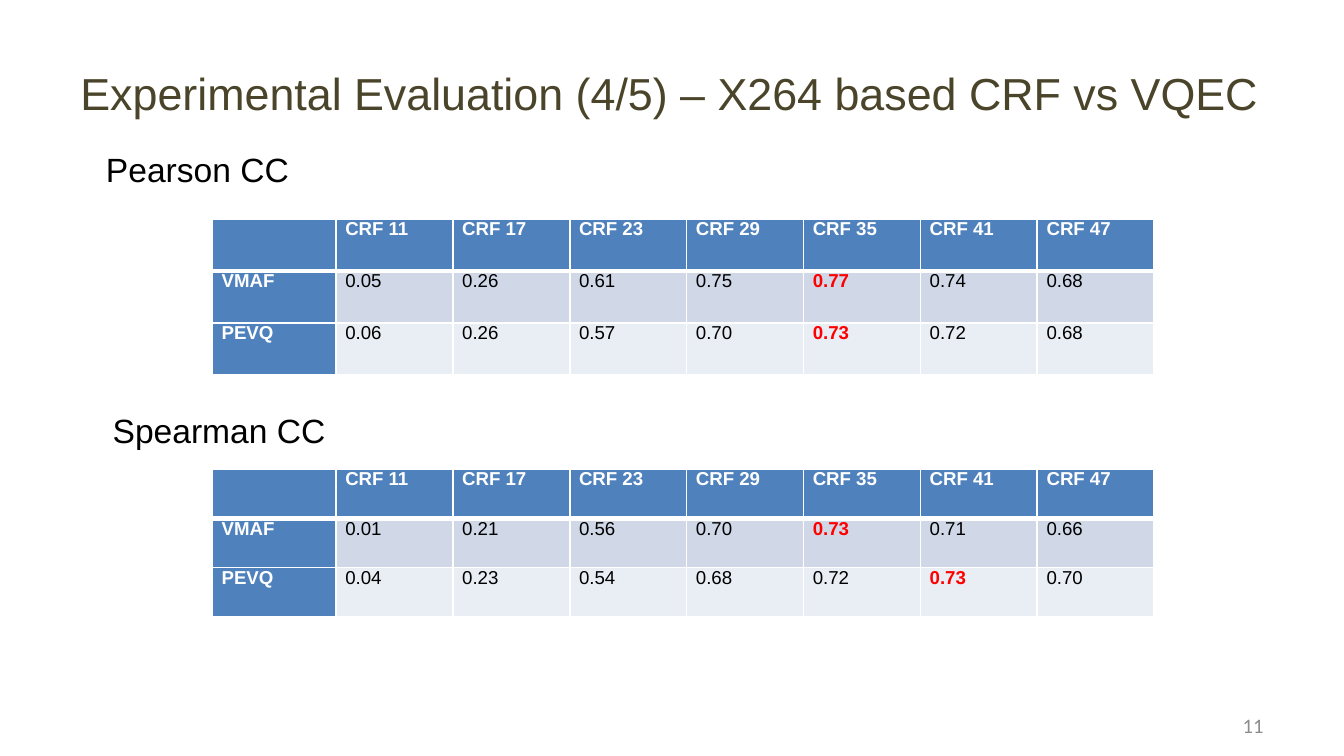
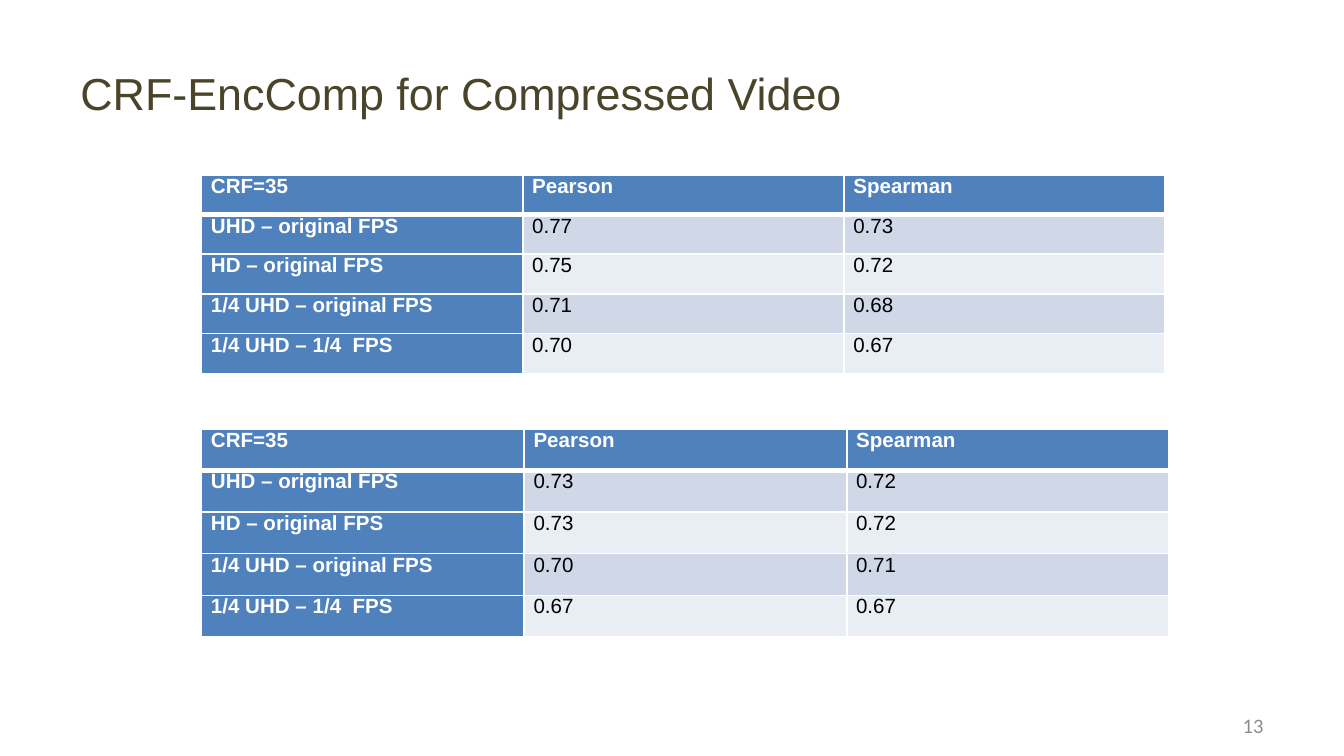
"""Build two slides of correlation tables for CRF-based video quality evaluation."""
from lxml.etree import SubElement
from pptx import Presentation
from pptx.dml.color import RGBColor
from pptx.enum.text import MSO_ANCHOR, PP_ALIGN
from pptx.oxml.ns import qn
from pptx.util import Inches, Pt

HEADER, BANDS = "4F81BD", ("D0D8E8", "E9EDF4")
WHITE, BLACK, RED, OLIVE, GREY = "FFFFFF", "000000", "FF0000", "4A452A", "8C8C8C"

CRF_HEADER = ["", *(f"CRF {crf}" for crf in range(11, 48, 6))]
FPS_HEADER = ["CRF=35", "Pearson", "Spearman"]
CRF_FORMAT = {"header": CRF_HEADER, "left": 1.58, "widths": [0.92] + [0.87] * 7,
              "size": 10, "mark_best": True}
FPS_FORMAT = {"header": FPS_HEADER, "left": 1.5, "size": 11, "mark_best": False}
FORMATS = ["UHD – original FPS", "HD – original FPS",
           "1/4 UHD – original FPS", "1/4 UHD – 1/4  FPS"]

SLIDES = [
    {
        "title": "Experimental Evaluation (4/5) – X264 based CRF vs VQEC",
        "number": "11",
        "labels": [("Pearson CC", (0.69, 1.06, 1.58, 0.4)),
                   ("Spearman CC", (0.74, 3, 1.8, 0.4))],
        "tables": [
            {**CRF_FORMAT, "top": 1.63, "height": 1.16, "rows": [
                ("VMAF", 0.05, 0.26, 0.61, 0.75, 0.77, 0.74, 0.68),
                ("PEVQ", 0.06, 0.26, 0.57, 0.70, 0.73, 0.72, 0.68)]},
            {**CRF_FORMAT, "top": 3.49, "height": 1.1, "rows": [
                ("VMAF", 0.01, 0.21, 0.56, 0.70, 0.73, 0.71, 0.66),
                ("PEVQ", 0.04, 0.23, 0.54, 0.68, 0.72, 0.73, 0.70)]},
        ],
    },
    {
        "title": "CRF-EncComp for Compressed Video",
        "number": "13",
        "labels": [],
        "tables": [
            {**FPS_FORMAT, "top": 1.3, "height": 1.48, "widths": [2.39] * 3,
             "rows": list(zip(FORMATS, (0.77, 0.75, 0.71, 0.70),
                              (0.73, 0.72, 0.68, 0.67)))},
            {**FPS_FORMAT, "top": 3.19, "height": 1.55, "widths": [2.4] * 3,
             "rows": list(zip(FORMATS, (0.73, 0.73, 0.70, 0.67),
                              (0.72, 0.72, 0.71, 0.67)))},
        ],
    },
]

TITLE = {"word_wrap": True}
LABEL = {"word_wrap": False}
NUMBER = {"vertical_anchor": MSO_ANCHOR.MIDDLE, "word_wrap": True}
CELL = {"margin_left": Inches(0.07), "margin_right": Inches(0.07),
        "margin_top": 0, "margin_bottom": 0}


def rgb(color):
    return RGBColor.from_string(color)


def apply(target, values):
    for key, value in values.items():
        setattr(target, key, value)


def write(paragraph, text, size, color, font="Arial", bold=False):
    run = paragraph.add_run()
    run.text = text
    apply(run.font, {"size": Pt(size), "name": font, "bold": bold})
    run.font.color.rgb = rgb(color)


def add_text(slide, text, place, frame_format, size, color, font="Arial",
             align=PP_ALIGN.LEFT):
    frame = slide.shapes.add_textbox(*map(Inches, place)).text_frame
    apply(frame, frame_format)
    paragraph = frame.paragraphs[0]
    paragraph.alignment = align
    write(paragraph, text, size, color, font)


def add_borders(cell, bottom):
    properties = cell._tc.get_or_add_tcPr()
    for side, width in {"L": 1, "R": 1, "T": 1, "B": bottom}.items():
        line = SubElement(properties, qn(f"a:ln{side}"), w=str(Pt(width)))
        fill = SubElement(line, qn("a:solidFill"))
        SubElement(fill, qn("a:srgbClr"), val=WHITE)


def add_scores(slide, scores):
    rows = [scores["header"], *scores["rows"]]
    widths = scores["widths"]
    place = (scores["left"], scores["top"], sum(widths), scores["height"])
    table = slide.shapes.add_table(len(rows), len(widths), *map(Inches, place)).table
    for column, width in zip(table.columns, widths):
        column.width = Inches(width)
    for r, row in enumerate(rows):
        table.rows[r].height = Inches(scores["height"] / len(rows))
        for c, value in enumerate(row):
            cell = table.cell(r, c)
            heading = r == 0 or c == 0
            best = not heading and scores["mark_best"] and value == max(row[1:])
            apply(cell, CELL)
            add_borders(cell, 3 if r == 0 else 1)
            cell.fill.solid()
            cell.fill.fore_color.rgb = rgb(HEADER if heading else BANDS[(r - 1) % 2])
            if value != "":
                write(cell.text_frame.paragraphs[0],
                      value if heading else f"{value:.2f}", scores["size"],
                      WHITE if heading else RED if best else BLACK,
                      bold=heading or best)


def main():
    deck = Presentation()
    apply(deck, {"slide_width": Inches(10), "slide_height": Inches(10) * 9 // 16})
    for content in SLIDES:
        slide = deck.slides.add_slide(deck.slide_layouts[6])
        add_text(slide, content["title"], (0.5, 0.44, 9, 0.62), TITLE, 24, OLIVE)
        for scores in content["tables"]:
            add_scores(slide, scores)
        for label, place in content["labels"]:
            add_text(slide, label, place, LABEL, 18, BLACK)
        add_text(slide, content["number"], (8.67, 5.25, 0.83, 0.3), NUMBER, 11,
                 GREY, "Calibri", PP_ALIGN.RIGHT)
    deck.save("out.pptx")


if __name__ == "__main__":
    main()
